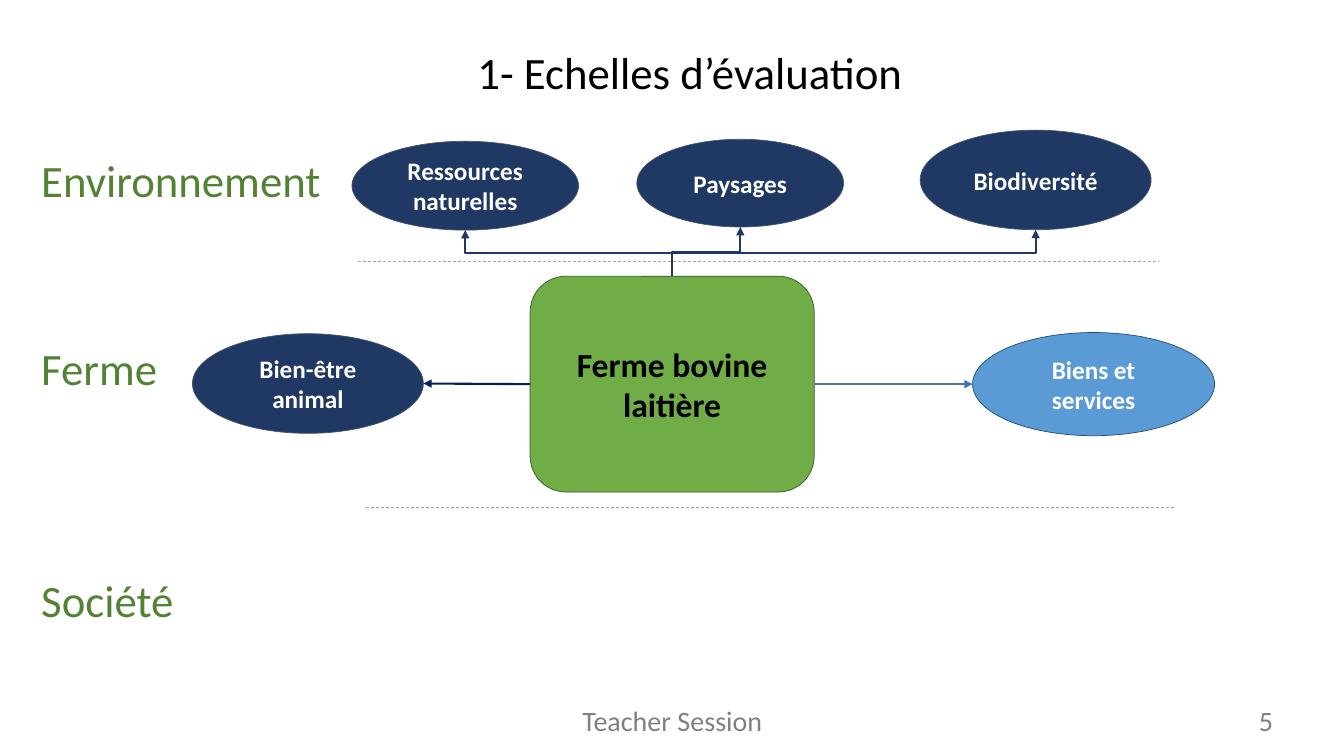
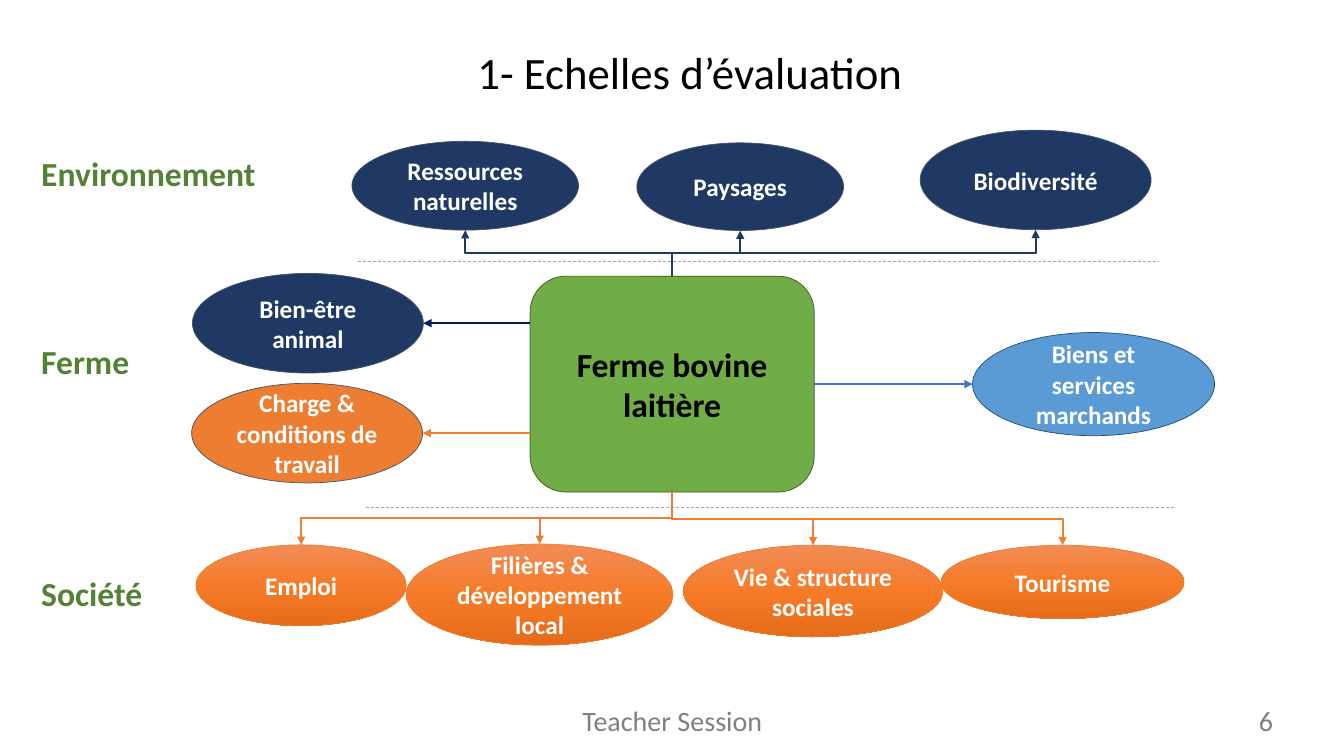
from copy import deepcopy

from lxml.etree import SubElement
from pptx import Presentation
from pptx.dml.color import RGBColor
from pptx.enum.dml import MSO_LINE
from pptx.enum.shapes import MSO_CONNECTOR, MSO_SHAPE
from pptx.enum.text import MSO_ANCHOR, PP_ALIGN
from pptx.oxml.ns import qn
from pptx.util import Cm, Pt

FONT = "Calibri"
BLACK, WHITE, GREY, RULE = "000000", "FFFFFF", "808080", "A5A5A5"
GREEN, GREEN_EDGE, GREEN_TEXT = "70AD47", "385723", "548235"
NAVY, NAVY_ARROW, SLATE = "203864", "002060", "44546A"
BLUE, BLUE_EDGE, BLUE_ARROW = "5B9BD5", "1F4E79", "4472C4"
ORANGE, ORANGE_SHADES = "ED7D31", ("F18C57", "F67B28", "E56C19")


def color(value):
    return RGBColor.from_string(value)


def write(sp, text, size=18, ink=WHITE, bold=False, align=PP_ALIGN.CENTER,
          anchor=MSO_ANCHOR.MIDDLE, spacing=None):
    tf = sp.text_frame
    tf.word_wrap = True
    tf.vertical_anchor = anchor
    p = tf.paragraphs[0]
    p.alignment = align
    if spacing:
        p.line_spacing = spacing
    r = p.add_run()
    r.text = text
    r.font.name, r.font.size, r.font.bold = FONT, Pt(size), bold
    r.font.color.rgb = color(ink)


def add_text(slide, box, text, **fmt):
    write(slide.shapes.add_textbox(*map(Cm, box)), text, **fmt)


def add_block(slide, kind, box, text, fill, edge, **fmt):
    """Filled shape with bold text; a tuple of colours gives a vertical gradient."""
    sp = slide.shapes.add_shape(kind, *map(Cm, box))
    sp.shadow.inherit = False
    if isinstance(fill, tuple):
        sp.fill.gradient()
        sp.fill.gradient_angle = 270
        stops = sp._element.spPr.find(qn("a:gradFill")).find(qn("a:gsLst"))
        stops.insert(1, deepcopy(stops[0]))
        for i, (stop, shade) in enumerate(zip(sp.fill.gradient_stops, fill)):
            stop.position = i / (len(fill) - 1)
            stop.color.rgb = color(shade)
    else:
        sp.fill.solid()
        sp.fill.fore_color.rgb = color(fill)
    sp.line.color.rgb = color(edge)
    sp.line.width = Pt(0.5)
    write(sp, text, bold=True, **fmt)
    return sp


def add_oval(slide, box, text, fill, edge):
    return add_block(slide, MSO_SHAPE.OVAL, box, text, fill, edge)


def add_line(slide, start, end, ink, width=1.5, kind=MSO_CONNECTOR.STRAIGHT,
             dash=None, arrow=True):
    """Connector between two points given in EMU."""
    line = slide.shapes.add_connector(kind, *map(int, (*start, *end)))
    line.line.color.rgb = color(ink)
    line.line.width = Pt(width)
    if dash:
        line.line.dash_style = dash
    spPr = line._element.spPr
    if arrow:
        SubElement(spPr.find(qn("a:ln")), qn("a:tailEnd"), type="triangle")
    SubElement(spPr, qn("a:effectLst"))
    return line


def add_elbow(slide, start, end, ink):
    """Arrow that leaves and arrives vertically: a turned horizontal elbow."""
    (x1, y1), (x2, y2) = start, end
    cx, cy = (x1 + x2) / 2, (y1 + y2) / 2
    dx, dy = abs(y2 - y1) / 2, abs(x2 - x1) / 2
    down = y2 > y1
    if down == (x2 > x1):
        dy = -dy
    line = add_line(slide, (cx - dx, cy - dy), (cx + dx, cy + dy), ink,
                    kind=MSO_CONNECTOR.ELBOW)
    xfrm = line._element.spPr.find(qn("a:xfrm"))
    xfrm.set("rot", str((90 if down else 270) * 60000))


def center(sp):
    return sp.left + sp.width // 2, sp.top + sp.height // 2


def add_frame(slide, box, number):
    """Title, footer and page number."""
    x, y, w, h = box
    add_text(slide, (x + 1.3, y + 1.02, w - 1.69, 1.75), "1- Echelles d’évaluation",
             size=32, ink=BLACK, spacing=0.9)
    add_text(slide, (x + 7.8, y + h - 1.45, 18.29, 1.12), "Teacher Session",
             size=20, ink=GREY, anchor=MSO_ANCHOR.TOP)
    add_text(slide, (x + w - 3.62, y + h - 1.4, 2.08, 1.02), str(number),
             size=20, ink=GREY, align=PP_ALIGN.RIGHT)


def add_scales(slide, box, size, bold):
    """Names of the three scales and the dotted rules between them."""
    x, y, w, h = box
    for dy, name in ((0, "Environnement"), (4.73, "Ferme"), (10.57, "Société")):
        add_text(slide, (x, y + dy, 8.1, h), name, size=size, ink=GREEN_TEXT,
                 bold=bold, align=PP_ALIGN.LEFT, anchor=MSO_ANCHOR.TOP)
    for dx, dy, length in ((8.23, 2.85, 20.19), (8.43, 9.05, 20.4)):
        add_line(slide, (Cm(x + dx), Cm(y + dy)), (Cm(x + dx + length), Cm(y + dy)),
                 RULE, width=0.5, dash=MSO_LINE.DASH, arrow=False)


def add_farm(slide, box):
    return add_block(slide, MSO_SHAPE.FLOWCHART_ALTERNATE_PROCESS, box,
                     "Ferme bovine laitière", GREEN, GREEN_EDGE, size=24, ink=BLACK)


def add_environment(slide, origin, farm, landscape_dy):
    x, y = origin
    ovals = (
        (0, 0.28, 5.71, 2.24, "Ressources naturelles"),
        (7.18, landscape_dy, 5.21, 2.21, "Paysages"),
        (14.32, 0, 5.82, 2.51, "Biodiversité"),
    )
    for dx, dy, w, h, text in ovals:
        sp = add_oval(slide, (x + dx, y + dy, w, h), text, NAVY, SLATE)
        add_elbow(slide, (center(farm)[0], farm.top),
                  (center(sp)[0], sp.top + sp.height), NAVY)


def add_outputs(slide, box, farm, text):
    sp = add_oval(slide, box, text, BLUE, BLUE_EDGE)
    line = add_line(slide, (farm.left + farm.width, center(farm)[1]),
                    (sp.left, center(sp)[1]), BLUE_ARROW)
    line.begin_connect(farm, 3)


def add_farm_effect(slide, box, farm, text, fill, ink):
    """Oval left of the farm; its arrow is joined when the two are level."""
    sp = add_oval(slide, box, text, fill, SLATE)
    y = center(sp)[1]
    line = add_line(slide, (farm.left, y), (sp.left + sp.width, y), ink)
    if abs(y - center(farm)[1]) < Cm(0.1):
        line.begin_connect(farm, 1)


def add_society(slide, origin, farm):
    x, y = origin
    ovals = (
        (5.3, 0, 6.72, 2.55, "Filières & développement local"),
        (0, 0.02, 5.3, 2.04, "Emploi"),
        (18.78, 0.03, 6.12, 1.85, "Tourisme"),
        (12.28, 0.03, 6.54, 2.31, "Vie & structure sociales"),
    )
    for dx, dy, w, h, text in ovals:
        sp = add_oval(slide, (x + dx, y + dy, w, h), text, ORANGE_SHADES, ORANGE)
        add_elbow(slide, (center(farm)[0], farm.top + farm.height),
                  (center(sp)[0], sp.top), ORANGE)


def add_scale_slide(prs, number, label_size, label_bold, landscape_dy, outputs,
                    welfare_y):
    """Slide parts common to both steps; returns the slide and its farm."""
    slide = prs.slides.add_slide(prs.slide_layouts[6])
    add_frame(slide, (0, 0, 33.87, 19.05), number)
    farm = add_farm(slide, (13.36, 6.96, 7.16, 5.44))
    add_scales(slide, (0.79, 3.73, 8.1, 1.63), label_size, label_bold)
    add_environment(slide, (8.87, 3.28), farm, landscape_dy)
    add_outputs(slide, (24.51, 8.38, 6.1, 2.6), farm, outputs)
    add_farm_effect(slide, (4.85, welfare_y, 5.82, 2.51), farm,
                    "Bien-être animal", NAVY, NAVY_ARROW)
    return slide, farm


def main():
    prs = Presentation()
    prs.slide_width, prs.slide_height = Cm(33.87), Cm(19.05)
    add_scale_slide(prs, 5, 32, False, 0.23, "Biens et services", 8.41)
    slide, farm = add_scale_slide(prs, 6, 24, True, 0.32,
                                  "Biens et services marchands", 6.89)
    add_society(slide, (4.94, 13.71), farm)
    add_farm_effect(slide, (4.83, 9.66, 5.82, 2.51), farm,
                    "Charge & conditions de travail", ORANGE, ORANGE)
    prs.save("out.pptx")


if __name__ == "__main__":
    main()
